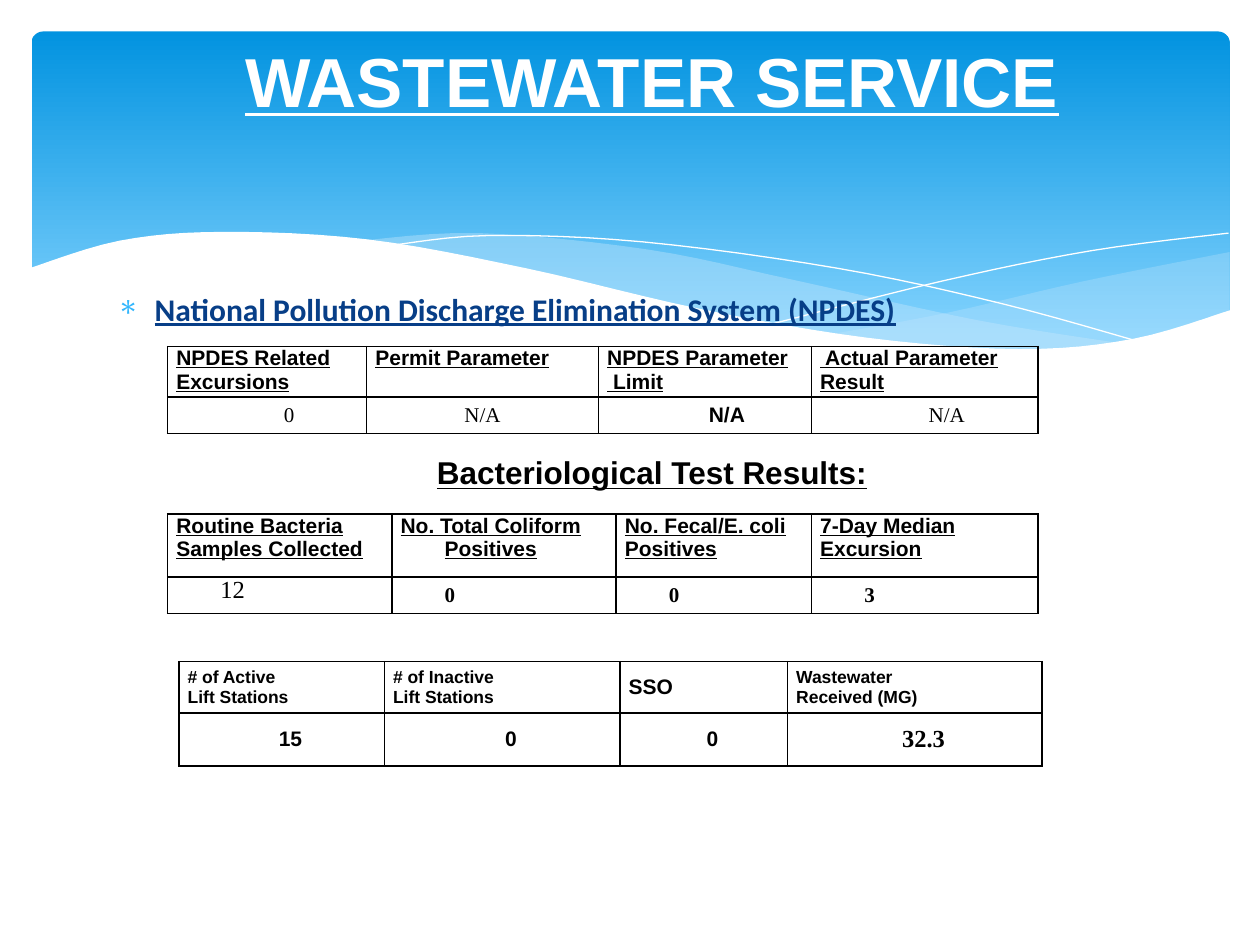
from lxml import etree
from pptx import Presentation
from pptx.dml.color import RGBColor
from pptx.enum.shapes import MSO_SHAPE
from pptx.enum.text import MSO_ANCHOR, PP_ALIGN
from pptx.oxml import parse_xml
from pptx.oxml.ns import nsdecls, qn
from pptx.util import Inches, Pt

color = RGBColor.from_string
SANS, SERIF = "Arial", "Times New Roman"
LEFT, CENTER = PP_ALIGN.LEFT, PP_ALIGN.CENTER


def write_line(paragraph, text, size, font, hex_color, align=LEFT, bold=True, underline=False, margin=0, first=0):
    paragraph.alignment = align
    properties = paragraph._p.get_or_add_pPr()
    properties.set("marL", str(Inches(margin)))
    properties.set("indent", str(Inches(first)))
    run = paragraph.add_run()
    run.text = text
    run.font.size = Pt(size)
    run.font.name = font
    run.font.bold = bold
    run.font.underline = underline
    run.font.color.rgb = color(hex_color)


def smooth_curve(knots, steps=6):
    padded = [knots[0], *knots, knots[-1]]
    curve = [knots[0]]
    for before, start, end, after in zip(padded, padded[1:], padded[2:], padded[3:]):
        for step in range(1, steps + 1):
            t = step / steps
            curve.append(tuple(
                b + (c - a) * t / 2 + (2 * a - 5 * b + 4 * c - d) * t**2 / 2 + (3 * b - a - 3 * c + d) * t**3 / 2
                for a, b, c, d in zip(before, start, end, after)))
    return curve


presentation = Presentation()
presentation.slide_width = Inches(10)
presentation.slide_height = Inches(7.5)
slide = presentation.slides.add_slide(presentation.slide_layouts[6])
shapes = slide.shapes

banner = shapes.add_shape(MSO_SHAPE.ROUNDED_RECTANGLE, Inches(0.25), Inches(0.25), Inches(9.51), Inches(2.7))
banner.adjustments[0] = 0.034
banner.shadow.inherit = False
banner.line.fill.background()
banner.fill.gradient()
banner.fill.gradient_angle = 270
for stop, (position, shade) in zip(banner.fill.gradient_stops, [(0, "0293E0"), (0.9, "83D3FE")]):
    stop.position = position
    stop.color.rgb = color(shade)

waves = [
    ("C6E7FC", 29, [
        [(9.76, 2), (8.61, 2.23), (7.53, 2.48), (6.61, 2.65)],
        [(6.61, 2.65), (7.45, 2.75), (8.24, 2.77), (9.05, 2.69), (9.76, 2.47)]]),
    ("C6E7FC", 40, [
        [(8.93, 2.73), (7.75, 2.54), (6.29, 2.22), (5.14, 1.98), (3.8, 1.85), (2.86, 1.91)],
        [(2.86, 1.91), (4.49, 2.22), (6.01, 2.55), (7.36, 2.75), (8.18, 2.78), (8.93, 2.73)]]),
    (None, 100, [[(3.09, 1.95), (3.87, 1.87), (5.1, 1.92), (6.65, 2.13), (7.95, 2.41), (9.07, 2.72)]]),
    (None, 100, [[(6.13, 2.57), (7.48, 2.23), (8.66, 1.99), (9.75, 1.85)]]),
    ("FFFFFF", 100, [
        [(9.77, 2.46), (8.99, 2.69), (8.09, 2.77), (6.88, 2.68), (5.55, 2.45),
         (4.18, 2.13), (2.92, 1.9), (1.77, 1.84), (0.95, 1.91), (0.23, 2.13)],
        [(0.23, 3.29), (9.77, 3.29)]]),
]
for shade, opacity, edges in waves:
    points = [(Inches(x), Inches(y)) for edge in edges for x, y in smooth_curve(edge)]
    builder = shapes.build_freeform(*points[0], scale=1.0)
    builder.add_line_segments(points[1:], close=shade is not None)
    wave = builder.convert_to_shape()
    wave.shadow.inherit = False
    if shade:
        wave.fill.solid()
        wave.fill.fore_color.rgb = color(shade)
        wave.line.fill.background()
        tint = wave._element.spPr.find(qn("a:solidFill"))[0]
        etree.SubElement(tint, qn("a:alpha")).set("val", str(opacity * 1000))
    else:
        wave.fill.background()
        wave.line.color.rgb = color("FFFFFF")
        wave.line.width = Pt(0)

system = shapes.add_textbox(Inches(0.83), Inches(2.25), Inches(8.1), Inches(0.41)).text_frame
system.word_wrap = True
system_line = system.paragraphs[0]
write_line(system_line, "National Pollution Discharge Elimination System (NPDES)", 18, "Calibri", "073E87",
           underline=True, margin=0.3, first=-0.3)
system_line.space_before = Pt(3.6)
bullet_color = etree.SubElement(system_line._p.pPr, qn("a:buClr"))
etree.SubElement(bullet_color, qn("a:srgbClr")).set("val", "31B6FD")
etree.SubElement(system_line._p.pPr, qn("a:buChar")).set("char", "∗")

title = shapes.add_textbox(Inches(0.5), Inches(0.3), Inches(9), Inches(1.13)).text_frame
title.word_wrap = True
title.margin_top = 0
write_line(title.paragraphs[0], "WASTEWATER SERVICE", 39.6, SANS, "FFFFFF", CENTER, underline=True, margin=0.35)

results = shapes.add_textbox(Inches(3), Inches(3.55), Inches(4), Inches(0.4)).text_frame
results.word_wrap = False
write_line(results.paragraphs[0], "Bacteriological Test Results:", 18, SANS, "000000", CENTER,
           underline=True, first=0.35)

TAB = 0.35
tables = [
    (1.33, 2.75, [1.58, 1.84, 1.69, 1.8], [0.37, 0.29], True, CENTER, 0,
     ["NPDES Related\nExcursions", "Permit Parameter", "NPDES Parameter\n Limit", " Actual Parameter\nResult"],
     [("0", 12, SERIF, False, TAB), ("N/A", 12, SERIF, False, 0),
      ("N/A", 12, SANS, True, TAB), ("N/A", 12, SERIF, False, TAB)]),
    (1.33, 4.08, [1.78, 1.78, 1.55, 1.8], [0.5, 0.29], True, LEFT, 0,
     ["Routine Bacteria\nSamples Collected", "No. Total Coliform\nPositives",
      "No. Fecal/E. coli\nPositives", "7-Day Median\nExcursion"],
     [("12", 14, SERIF, False, TAB)] + [(count, 12, SERIF, True, TAB) for count in "003"]),
    (1.42, 5.25, [1.63, 1.87, 1.33, 2.02], [0.41, 0.42], False, CENTER, 0.14,
     ["# of Active\nLift Stations", "# of Inactive\nLift Stations", "SSO", "Wastewater\nReceived (MG)"],
     [(count, 12, SANS, True, 0) for count in ("15", "0", "0")] + [("32.3", 14, SERIF, True, 0)]),
]
for left, top, widths, heights, underlined, value_align, value_margin, headings, values in tables:
    table = shapes.add_table(len(heights), len(widths), Inches(left), Inches(top),
                             Inches(sum(widths)), Inches(sum(heights))).table
    table.first_row = table.horz_banding = False
    for row, height in zip(table.rows, heights):
        row.height = Inches(height)
    for column, width in zip(table.columns, widths):
        column.width = Inches(width)
    for cell in table.iter_cells():
        cell.margin_left = cell.margin_right = Inches(0.07)
        cell.margin_top = cell.margin_bottom = 0
        cell.vertical_anchor = MSO_ANCHOR.MIDDLE
        cell.fill.background()
        for order, side in enumerate(("lnL", "lnR", "lnT", "lnB")):
            cell._tc.tcPr.insert(order, parse_xml(
                f'<a:{side} {nsdecls("a")} w="{Pt(1)}"><a:solidFill>'
                f'<a:srgbClr val="000000"/></a:solidFill></a:{side}>'))
    for c, (heading, (value, size, font, bold, first)) in enumerate(zip(headings, values)):
        heading_cell, value_cell = table.cell(0, c), table.cell(1, c)
        if underlined:
            heading_cell.vertical_anchor = MSO_ANCHOR.TOP
        heading_size = 12 if underlined or "\n" not in heading else 10
        for i, line in enumerate(heading.split("\n")):
            frame = heading_cell.text_frame
            paragraph = frame.add_paragraph() if i else frame.paragraphs[0]
            write_line(paragraph, line, heading_size, SANS, "000000", underline=underlined,
                       first=TAB if i and "Coliform" in heading else 0)
        if value == "12":
            value_cell.vertical_anchor = MSO_ANCHOR.TOP
        write_line(value_cell.text_frame.paragraphs[0], value, size, font, "000000", value_align, bold,
                   margin=value_margin, first=first)

presentation.save("out.pptx")
